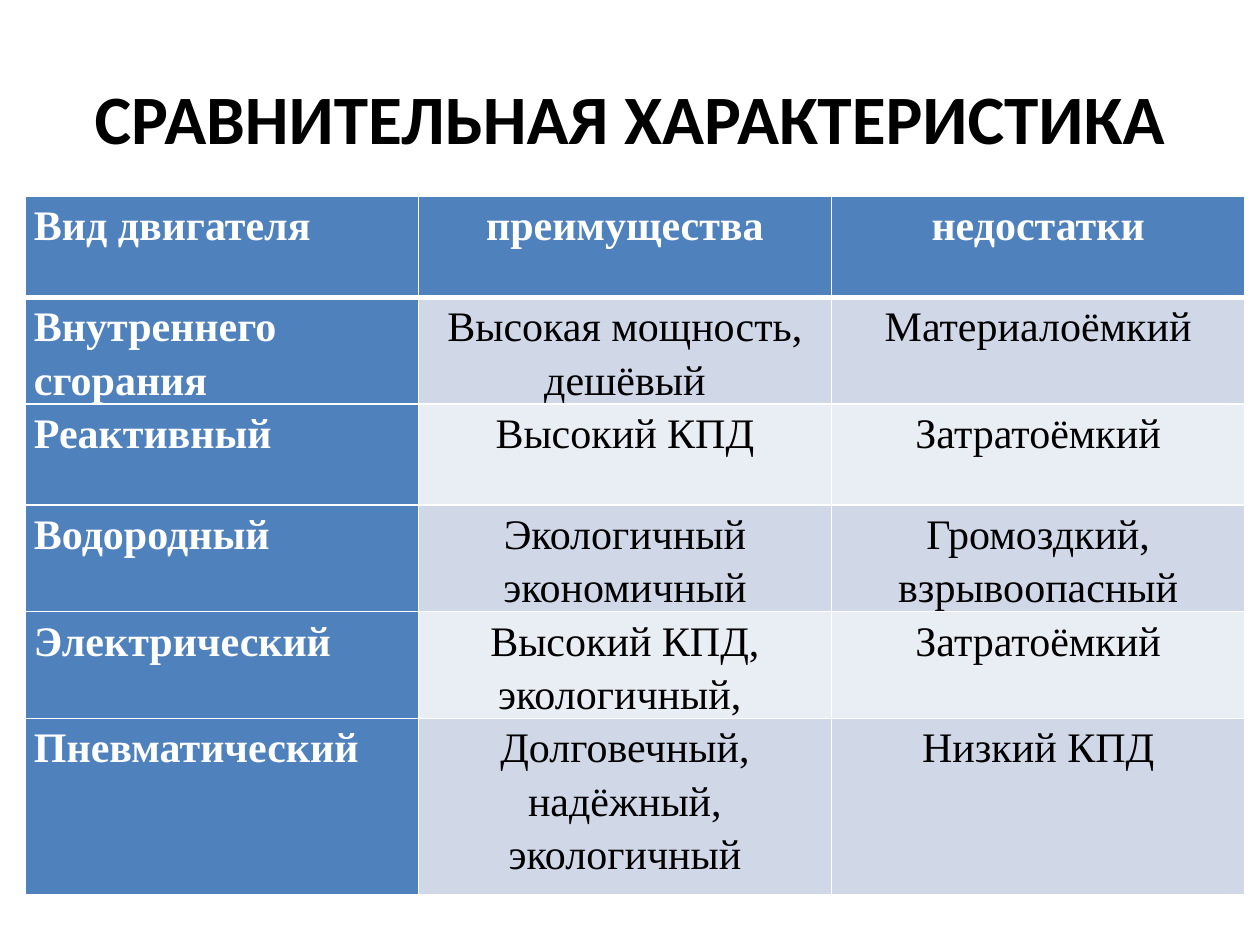
from lxml import etree
from pptx import Presentation
from pptx import util as u
from pptx.dml.color import RGBColor
from pptx.enum import text
from pptx.oxml.ns import qn

HEADING = "СРАВНИТЕЛЬНАЯ ХАРАКТЕРИСТИКА"
ENGINES = [
    ("Вид двигателя", "преимущества", "недостатки"),
    ("Внутреннего сгорания", "Высокая мощность, дешёвый", "Материалоёмкий"),
    ("Реактивный", "Высокий КПД", "Затратоёмкий"),
    ("Водородный", "Экологичный экономичный", "Громоздкий, взрывоопасный"),
    ("Электрический", "Высокий КПД, экологичный, ", "Затратоёмкий"),
    ("Пневматический", "Долговечный, надёжный, экологичный", "Низкий КПД"),
]
COLORS = {"head": "4F81BD", "odd": "D0D8E8", "even": "E9EDF4",
          "light": "FFFFFF", "dark": "000000"}
COLUMN_WIDTHS = [3.12, 3.28, 3.28]
ROW_HEIGHTS = [0.8] * 5 + [1.4]
TABLE_LEFT, TABLE_TOP = 0.2, 1.56
CELL_FORMAT = {"margin_left": u.Inches(0.07), "margin_right": u.Inches(0.07),
               "margin_top": 0, "margin_bottom": 0,
               "vertical_anchor": text.MSO_ANCHOR.TOP}
HEADING_FORMAT = {"name": "Calibri", "size": u.Pt(39.6), "bold": True}
CELL_FONT = {"name": "Times New Roman", "size": u.Pt(24)}


def apply(target, values):
    for key, value in values.items():
        setattr(target, key, value)


def rgb(name):
    return RGBColor.from_string(COLORS[name])


def add_borders(cell, widths):
    """Draw cell edges; widths are points for left, right, top, bottom."""
    properties = cell._tc.get_or_add_tcPr()
    for place, (side, width) in enumerate(zip("LRTB", widths)):
        edge = etree.Element(qn(f"a:ln{side}"), w=str(u.Pt(width)))
        fill = etree.SubElement(edge, qn("a:solidFill"))
        etree.SubElement(fill, qn("a:srgbClr"), val=COLORS["light"])
        properties.insert(place, edge)


def fill_cell(cell, wording, row, column):
    is_head = row == 0 or column == 0
    apply(cell, CELL_FORMAT)
    cell.fill.solid()
    cell.fill.fore_color.rgb = rgb("head" if is_head else "odd" if row % 2 else "even")
    add_borders(cell, (1, 1, 3 if row == 1 else 1, 3 if row == 0 else 1))
    cell.text = wording
    line = cell.text_frame.paragraphs[0]
    line.line_spacing = 1.15
    line.alignment = text.PP_ALIGN.CENTER if column else text.PP_ALIGN.LEFT
    font = line.runs[0].font
    apply(font, {**CELL_FONT, "bold": is_head})
    font.color.rgb = rgb("light" if is_head else "dark")


def main():
    deck = Presentation()
    deck.slide_width, deck.slide_height = u.Inches(10), u.Inches(7.5)
    slide = deck.slides.add_slide(deck.slide_layouts[5])

    heading = slide.shapes.title
    apply(heading, {"left": u.Inches(0.5), "top": u.Inches(0.3),
                    "width": u.Inches(9), "height": u.Inches(1.25)})
    heading.text = HEADING
    heading.text_frame.vertical_anchor = text.MSO_ANCHOR.MIDDLE
    line = heading.text_frame.paragraphs[0]
    line.alignment = text.PP_ALIGN.CENTER
    apply(line.runs[0].font, HEADING_FORMAT)
    line.runs[0].font.color.rgb = rgb("dark")

    comparison = slide.shapes.add_table(
        len(ENGINES), len(COLUMN_WIDTHS), u.Inches(TABLE_LEFT), u.Inches(TABLE_TOP),
        u.Inches(sum(COLUMN_WIDTHS)), u.Inches(sum(ROW_HEIGHTS))).table
    for column, width in zip(comparison.columns, COLUMN_WIDTHS):
        column.width = u.Inches(width)
    for row, height in zip(comparison.rows, ROW_HEIGHTS):
        row.height = u.Inches(height)
    for row, engine in enumerate(ENGINES):
        for column, wording in enumerate(engine):
            fill_cell(comparison.cell(row, column), wording, row, column)

    deck.save("out.pptx")


if __name__ == "__main__":
    main()
